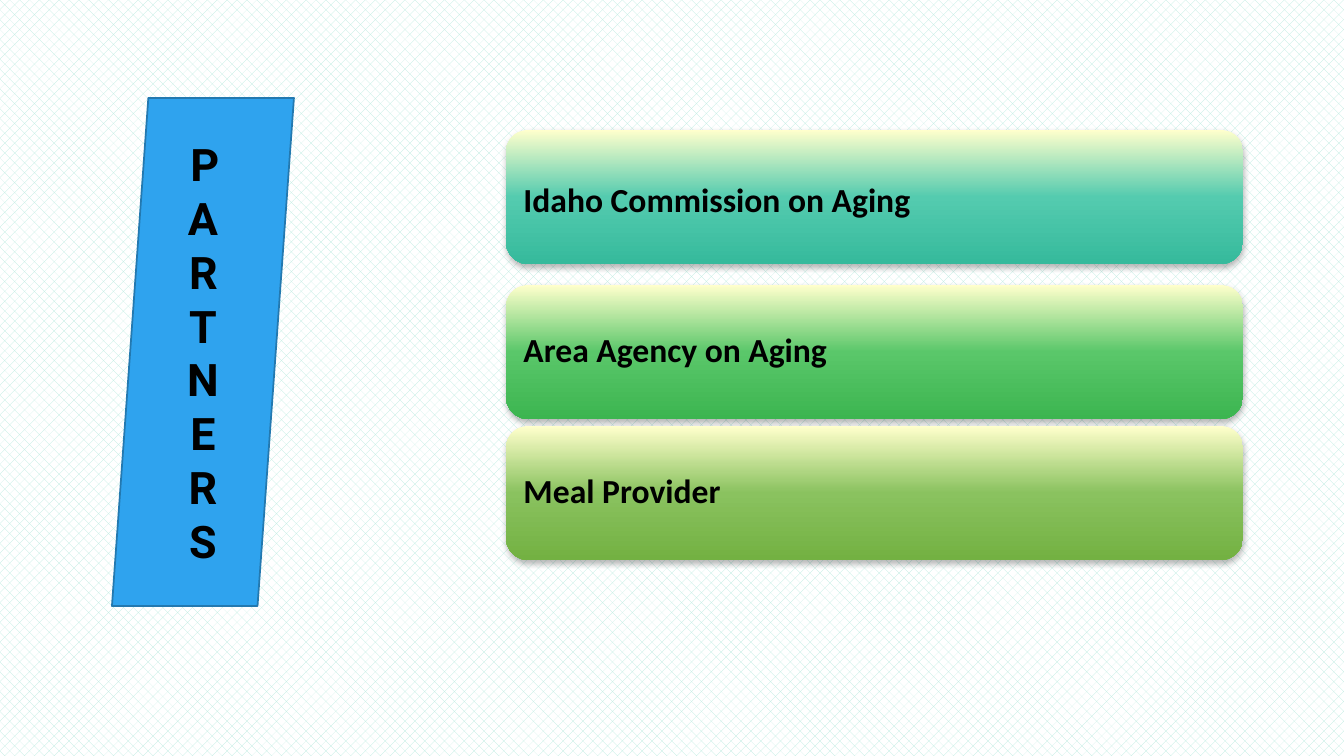
from copy import deepcopy

from lxml import etree
from pptx import Presentation
from pptx.dml.color import RGBColor
from pptx.enum.dml import MSO_PATTERN
from pptx.enum.shapes import MSO_SHAPE
from pptx.enum.text import MSO_ANCHOR, PP_ALIGN
from pptx.oxml.ns import qn
from pptx.util import Pt

EMU_PER_PX = 12192000 / 1344
PERCENT_30 = MSO_PATTERN.PERCENT_30
ROUNDED = MSO_SHAPE.ROUNDED_RECTANGLE
SLANTED = MSO_SHAPE.FLOWCHART_DATA
MIDDLE = MSO_ANCHOR.MIDDLE
LEFT, CENTER = PP_ALIGN.LEFT, PP_ALIGN.CENTER


def px(length):
    return round(length * EMU_PER_PX)


def rgb(color):
    return RGBColor.from_string(color)


def write(frame, text, size, font, color="000000", bold=True, align=LEFT, spacing=1.0):
    frame.word_wrap = True
    frame.vertical_anchor = MIDDLE
    paragraph = frame.paragraphs[0]
    paragraph.alignment = align
    paragraph.line_spacing = spacing
    run = paragraph.add_run()
    run.text = text
    run.font.size = Pt(size)
    run.font.name = font
    run.font.bold = bold
    run.font.color.rgb = rgb(color)


class PartnersSlide:
    heading_font = "Roboto"
    body_font = "Calibri"
    highlight = "FFFFCC"

    def __init__(self, deck):
        self.slide = deck.slides.add_slide(deck.slide_layouts[6])

    def background(self, fore, back):
        fill = self.slide.background.fill
        fill.patterned()
        fill.pattern = PERCENT_30
        fill.fore_color.rgb = rgb(fore)
        fill.back_color.rgb = rgb(back)

    def shape(self, kind, left, top, width, height):
        shape = self.slide.shapes.add_shape(kind, px(left), px(top), px(width), px(height))
        shape.shadow.inherit = False
        return shape

    def gradient(self, shape, colors):
        shape.fill.gradient()
        shape.fill.gradient_angle = 270
        stop_list = shape._element.spPr.find(".//" + qn("a:gsLst"))
        stop_list.insert(1, deepcopy(stop_list[0]))
        for index, (stop, color) in enumerate(zip(shape.fill.gradient_stops, colors)):
            stop.position = index / 2
            stop.color.rgb = rgb(color)

    def drop_shadow(self, shape):
        effects = shape._element.spPr.find(qn("a:effectLst"))
        shadow = etree.SubElement(
            effects, qn("a:outerShdw"), blurRad=str(Pt(4)), dist=str(Pt(2)),
            dir="5400000", algn="ctr", rotWithShape="0")
        tint = etree.SubElement(shadow, qn("a:srgbClr"), val="000000")
        etree.SubElement(tint, qn("a:alpha"), val="28000")

    def partner_card(self, name, top, middle, bottom, text_drop):
        card = self.shape(ROUNDED, 506, top, 737, 134)
        self.gradient(card, (self.highlight, middle, bottom))
        card.line.fill.background()
        self.drop_shadow(card)
        frame = card.text_frame
        frame.margin_left = frame.margin_right = px(11)
        frame.margin_top = px(10 + 2 * text_drop)
        frame.margin_bottom = px(10)
        write(frame, name, 24, self.body_font, spacing=0.9)

    def vertical_banner(self, title):
        banner = self.shape(SLANTED, 112, 98, 182, 508)
        banner.fill.solid()
        banner.fill.fore_color.rgb = rgb("2FA3EE")
        banner.line.color.rgb = rgb("2379B0")
        banner.line.width = Pt(1.25)
        write(banner.text_frame, title, 32, self.heading_font, align=CENTER)
        banner.text_frame._txBody.bodyPr.set("vert", "wordArtVert")


def main():
    deck = Presentation()
    deck.slide_width, deck.slide_height = px(1344), px(756)
    page = PartnersSlide(deck)
    page.background("B7EADE", "FFFFFF")
    partners = (
        ("Idaho Commission on Aging", 130, "54CBAF", "36BA9C", 5),
        ("Area Agency on Aging", 285, "5AC76A", "3CB550", 0),
        ("Meal Provider", 426, "8AC25F", "73B142", 0),
    )
    for partner in partners:
        page.partner_card(*partner)
    page.vertical_banner("PARTNERS")
    deck.save("out.pptx")


if __name__ == "__main__":
    main()
